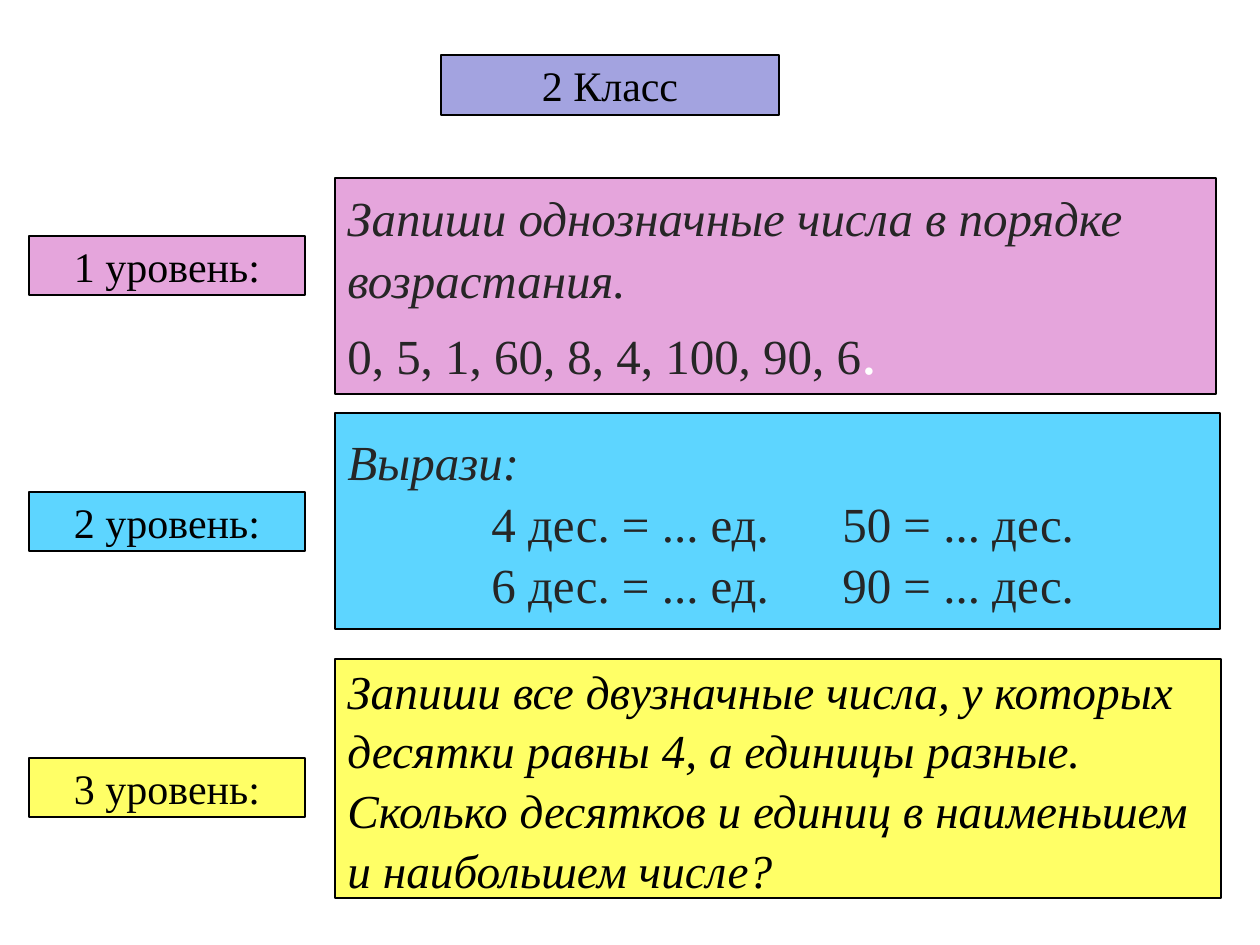
from dataclasses import dataclass

from lxml import etree
from pptx import Presentation, util as u
from pptx.dml.color import RGBColor
from pptx.enum import shapes, text
from pptx.oxml.ns import qn


@dataclass(frozen=True)
class Theme:
    font: str = "Times New Roman"
    title: str = "A3A3E0"
    pink: str = "E5A5DC"
    blue: str = "5DD5FF"
    yellow: str = "FFFF66"
    black: str = "000000"
    gray: str = "262626"
    white: str = "FFFFFF"
    label_size: int = 24
    task_size: int = 28
    long_task_size: int = 27
    dot_size: int = 36
    border: float = 0.75


THEME = Theme()
WIDTH, HEIGHT = 1260, 945


def px(length):
    return u.Emu(round(length * 914400 / 126))


class LevelPage:
    """Holds the theme and the slide that the boxes are placed on."""

    def __init__(self, deck, theme):
        self.theme = theme
        self.page = deck.slides.add_slide(deck.slide_layouts[5])

    def style_box(self, box, fill):
        box.fill.solid()
        box.fill.fore_color.rgb = RGBColor.from_string(fill)
        box.line.color.rgb = RGBColor.from_string(self.theme.black)
        box.line.width = u.Pt(self.theme.border)
        frame = box.text_frame
        frame.word_wrap = True
        frame.auto_size = text.MSO_AUTO_SIZE.NONE
        frame.vertical_anchor = text.MSO_ANCHOR.MIDDLE

    def style_font(self, font, size, color, italic=False):
        font.name = self.theme.font
        font.size = u.Pt(size)
        font.italic = italic
        font.color.rgb = RGBColor.from_string(color)

    def add_box(self, left, top, width, height, fill):
        box = self.page.shapes.add_shape(
            shapes.MSO_SHAPE.RECTANGLE, px(left), px(top), px(width), px(height))
        box.shadow.inherit = False
        self.style_box(box, fill)
        return box

    def write_caption(self, box, caption):
        para = box.text_frame.paragraphs[0]
        para.text = caption
        para.alignment = text.PP_ALIGN.CENTER
        self.style_font(para.font, self.theme.label_size, self.theme.black)

    def add_title(self, left, top, width, height, caption):
        box = self.page.shapes.title
        box.left, box.top = px(left), px(top)
        box.width, box.height = px(width), px(height)
        self.style_box(box, self.theme.title)
        self.write_caption(box, caption)

    def add_label(self, top, caption, fill):
        self.write_caption(self.add_box(29, top, 276, 59, fill), caption)

    def add_task(self, top, width, height, fill, size, color, lines, tabs=()):
        """Place a task box; lines are (wording, italic) and tabs are px stops."""
        frame = self.add_box(335, top, width, height, fill).text_frame
        for index, (wording, italic) in enumerate(lines):
            para = frame.paragraphs[0] if index == 0 else frame.add_paragraph()
            para.text = wording
            para.alignment = text.PP_ALIGN.LEFT
            para.line_spacing = 1.05
            if "\t" in wording:
                self.add_tabs(para, tabs)
            self.style_font(para.font, size, color, italic)
        return frame

    def add_tabs(self, para, stops):
        tab_list = etree.SubElement(para._p.get_or_add_pPr(), qn("a:tabLst"))
        for stop in stops:
            etree.SubElement(tab_list, qn("a:tab"), pos=str(px(stop)), algn="l")

    def add_final_dot(self, frame):
        span = frame.paragraphs[-1].add_run()
        span.text = "."
        self.style_font(span.font, self.theme.dot_size, self.theme.white)


def main():
    deck = Presentation()
    deck.slide_width, deck.slide_height = px(WIDTH), px(HEIGHT)
    page = LevelPage(deck, THEME)
    page.add_title(441, 55, 338, 60, "2 Класс")

    ordering = page.add_task(
        178, 881, 216, THEME.pink, THEME.task_size, THEME.gray,
        [("Запиши однозначные числа в порядке", True),
         ("возрастания.", True),
         ("0, 5, 1, 60, 8, 4, 100, 90, 6", False)])
    page.add_final_dot(ordering)

    page.add_task(
        413, 885, 216, THEME.blue, THEME.task_size, THEME.gray,
        [("Вырази:", True),
         ("\t4 дес. = ... ед.\t50 = ... дес.", False),
         ("\t6 дес. = ... ед.\t90 = ... дес.", False)],
        tabs=(144, 495))

    page.add_task(
        659, 886, 239, THEME.yellow, THEME.long_task_size, THEME.black,
        [(line, True) for line in (
            "Запиши все двузначные числа, у которых",
            "десятки равны 4, а единицы разные.",
            "Сколько десятков и единиц в наименьшем",
            "и наибольшем числе?")])

    labels = ((236, THEME.pink), (492, THEME.blue), (758, THEME.yellow))
    for level, (top, fill) in enumerate(labels, start=1):
        page.add_label(top, f"{level} уровень:", fill)

    deck.save("out.pptx")


if __name__ == "__main__":
    main()
